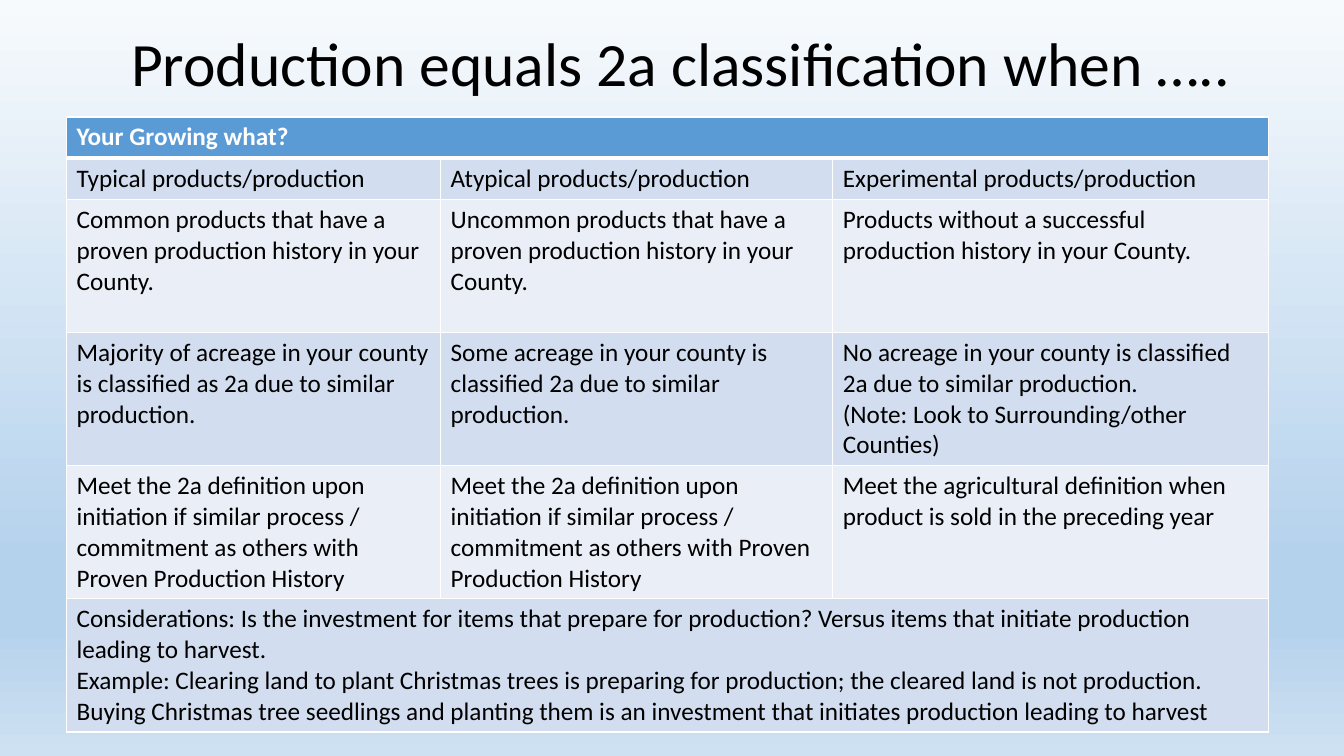
from lxml.etree import SubElement
from pptx import Presentation
from pptx.dml.color import RGBColor
from pptx.enum.text import MSO_ANCHOR, PP_ALIGN
from pptx.oxml.ns import qn
from pptx.util import Inches, Pt

TITLE = "Production equals 2a classification when ….."
MEETS_ON_START = ("Meet the 2a definition upon initiation if similar process / "
                  "commitment as others with Proven Production History")
# A row with a single entry spans every column.
ROWS = [
    ["Your Growing what?"],
    ["Typical products/production", "Atypical products/production",
     "Experimental products/production"],
    ["Common products that have a proven production history in your County.",
     "Uncommon products that have a proven production history in your County.",
     "Products without a successful production history in your County."],
    ["Majority of acreage in your county is classified as 2a due to similar production.",
     "Some acreage in your county is classified 2a due to similar production.",
     "No acreage in your county is classified 2a due to similar production.\n"
     "(Note: Look to Surrounding/other Counties)"],
    [MEETS_ON_START, MEETS_ON_START,
     "Meet the agricultural definition when product is sold in the preceding year"],
    ["Considerations: Is the investment for items that prepare for production? "
     "Versus items that initiate production leading to harvest.\n"
     "Example: Clearing land to plant Christmas trees is preparing for production; "
     "the cleared land is not production. Buying Christmas tree seedlings and planting "
     "them is an investment that initiates production leading to harvest"],
]

BLACK = RGBColor(0x00, 0x00, 0x00)
WHITE = RGBColor(0xFF, 0xFF, 0xFF)
HEADER_BLUE = RGBColor(0x5B, 0x9B, 0xD5)
BANDS = [RGBColor(0xEA, 0xEF, 0xF7), RGBColor(0xD2, 0xDE, 0xEF)]
SKY_STOPS = [
    (0, RGBColor(0xF7, 0xFA, 0xFD)),
    (74, RGBColor(0xB5, 0xD2, 0xEC)),
    (83, RGBColor(0xB5, 0xD2, 0xEC)),
    (100, RGBColor(0xCE, 0xE1, 0xF2)),
]

TITLE_BOX = {"left": 1.2, "top": 0.23, "width": 11.5, "height": 0.86}
TABLE_LEFT, TABLE_TOP = 0.66, 1.16
COLUMN_WIDTHS = [3.71, 3.89, 4.32]
SHORT_ROW, TALL_ROW = 0.41, 1.32
ROW_HEIGHTS = [SHORT_ROW] * 2 + [TALL_ROW] * 4
TITLE_FONT = {"name": "Calibri", "size": Pt(44)}
CELL_FONT = {"name": "Calibri", "size": Pt(18)}


def format_font(font, color, values):
    font.color.rgb = color
    for attribute, value in values.items():
        setattr(font, attribute, value)


def paint_background(slide):
    sky = slide.background.fill
    sky.gradient()
    sky.gradient_angle = 270
    stops = slide.element.find(".//" + qn("a:gsLst"))
    stops.clear()
    for percent, color in SKY_STOPS:
        stop = SubElement(stops, qn("a:gs"), pos=str(percent * 1000))
        SubElement(stop, qn("a:srgbClr"), val=str(color))


def add_title(slide):
    title = slide.shapes.title
    for side, inches in TITLE_BOX.items():
        setattr(title, side, Inches(inches))
    title.text_frame.text = TITLE
    title.text_frame.vertical_anchor = MSO_ANCHOR.MIDDLE
    heading = title.text_frame.paragraphs[0]
    heading.alignment = PP_ALIGN.LEFT
    heading.line_spacing = 0.9
    format_font(heading.runs[0].font, BLACK, TITLE_FONT)


def draw_borders(cell, widths):
    properties = cell._tc.get_or_add_tcPr()
    for side, width in widths.items():
        border = SubElement(properties, qn(f"a:ln{side}"), w=str(Pt(width)))
        SubElement(SubElement(border, qn("a:solidFill")), qn("a:srgbClr"), val=str(WHITE))


def add_production_table(slide):
    table = slide.shapes.add_table(
        len(ROWS), len(COLUMN_WIDTHS), Inches(TABLE_LEFT), Inches(TABLE_TOP),
        Inches(sum(COLUMN_WIDTHS)), Inches(sum(ROW_HEIGHTS))).table
    for column, width in zip(table.columns, COLUMN_WIDTHS):
        column.width = Inches(width)
    last_column = len(COLUMN_WIDTHS) - 1
    for r, (entries, height) in enumerate(zip(ROWS, ROW_HEIGHTS)):
        table.rows[r].height = Inches(height)
        is_header = r == 0
        if len(entries) == 1:
            table.cell(r, 0).merge(table.cell(r, last_column))
        for c in range(len(COLUMN_WIDTHS)):
            cell = table.cell(r, c)
            draw_borders(cell, {"L": 1, "R": 1, "T": 3 if r == 1 else 1,
                                "B": 3 if is_header else 1})
            cell.fill.solid()
            cell.fill.fore_color.rgb = HEADER_BLUE if is_header else BANDS[r % 2]
        for c, entry in enumerate(entries):
            frame = table.cell(r, c).text_frame
            frame.text = entry
            for paragraph in frame.paragraphs:
                format_font(paragraph.runs[0].font, WHITE if is_header else BLACK,
                            {**CELL_FONT, "bold": is_header})


def main():
    deck = Presentation()
    deck.slide_width, deck.slide_height = Inches(13.33), Inches(7.5)
    slide = deck.slides.add_slide(deck.slide_layouts[5])
    paint_background(slide)
    add_title(slide)
    add_production_table(slide)
    deck.save("out.pptx")


if __name__ == "__main__":
    main()
